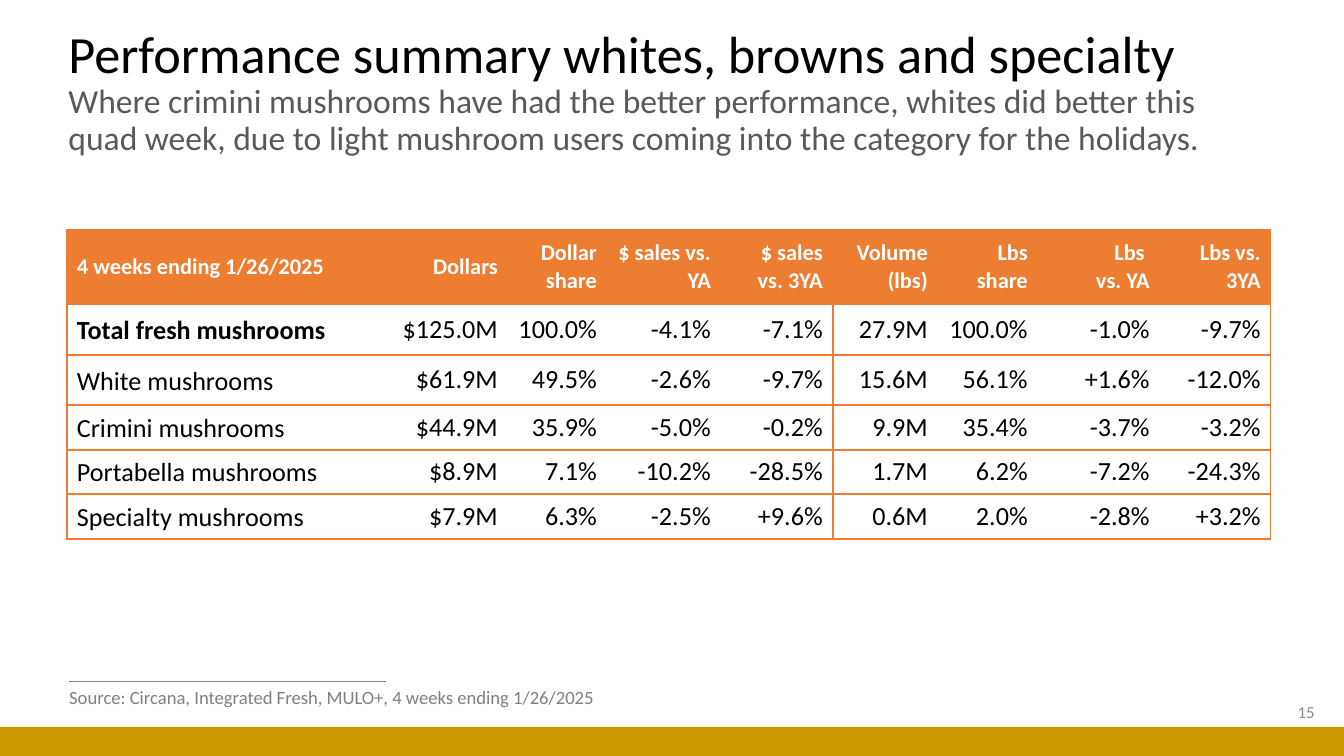
from lxml import etree
from pptx import Presentation
from pptx.dml.color import RGBColor
from pptx.enum.shapes import MSO_CONNECTOR, MSO_SHAPE
from pptx.enum.text import MSO_ANCHOR, MSO_AUTO_SIZE, PP_ALIGN
from pptx.oxml.ns import qn
from pptx.util import Pt

LEFT, RIGHT = PP_ALIGN.LEFT, PP_ALIGN.RIGHT
MIDDLE, TOP = MSO_ANCHOR.MIDDLE, MSO_ANCHOR.TOP
NO_FIT = MSO_AUTO_SIZE.NONE
STRAIGHT = MSO_CONNECTOR.STRAIGHT
RECT = MSO_SHAPE.RECTANGLE

BLACK = RGBColor(0x00, 0x00, 0x00)
WHITE = RGBColor(0xFF, 0xFF, 0xFF)
DARK = RGBColor(0x59, 0x59, 0x59)
GRAY = RGBColor(0x80, 0x80, 0x80)
PALE = RGBColor(0x8C, 0x8C, 0x8C)
ORANGE = RGBColor(0xED, 0x7D, 0x31)
GOLD = RGBColor(0xCC, 0x99, 0x00)

SCALE = 914400 / 134.4
WIDTHS = [319, 122, 99, 114, 112, 105, 100, 122, 111]
HEIGHTS = [74, 51, 50, 45, 44, 45]
LEFT_EDGES = (0, 5)
RIGHT_EDGES = (4, 8)

HEADS = [
    ["4 weeks ending 1/26/2025"], ["Dollars"], ["Dollar share"],
    ["$ sales vs. YA"], ["$ sales vs. 3YA"], ["Volume (lbs)"],
    ["Lbs", "share"], ["Lbs \nvs. YA"], ["Lbs vs. 3YA"],
]
ROWS = [
    ["Total fresh mushrooms", "$125.0M", "100.0%", "-4.1%", "-7.1%",
     "27.9M", "100.0%", "-1.0%", "-9.7%"],
    ["White mushrooms", "$61.9M", "49.5%", "-2.6%", "-9.7%",
     "15.6M", "56.1%", "+1.6%", "-12.0%"],
    ["Crimini mushrooms", "$44.9M", "35.9%", "-5.0%", "-0.2%",
     "9.9M", "35.4%", "-3.7%", "-3.2%"],
    ["Portabella mushrooms", "$8.9M", "7.1%", "-10.2%", "-28.5%",
     "1.7M", "6.2%", "-7.2%", "-24.3%"],
    ["Specialty mushrooms", "$7.9M", "6.3%", "-2.5%", "+9.6%",
     "0.6M", "2.0%", "-2.8%", "+3.2%"],
]


def px(num):
    return round(num * SCALE)


class Deck:
    font = "Calibri"

    def __init__(self, wide, high):
        self.file = Presentation()
        self.file.slide_width, self.file.slide_height = px(wide), px(high)
        self.slide = self.file.slides.add_slide(self.file.slide_layouts[5])
        self.shapes = self.slide.shapes

    def run(self, para, text, size, color, bold=False):
        for num, line in enumerate(text.split("\n")):
            if num:
                self.split(para, size)
            run = para.add_run()
            run.text = line
            run.font.name = self.font
            run.font.size = Pt(size)
            run.font.bold = bold
            run.font.color.rgb = color

    def split(self, para, size):
        para.add_line_break()
        etree.SubElement(para._p[-1], qn("a:rPr"), sz=str(size * 100))

    def title(self, x, y, wide, high, head, note):
        box = self.shapes.title
        box.left, box.top, box.width, box.height = map(px, (x, y, wide, high))
        frame = box.text_frame
        frame.auto_size = NO_FIT
        frame.word_wrap = True
        frame.vertical_anchor = MIDDLE
        para = frame.paragraphs[0]
        para.alignment = LEFT
        para.line_spacing = 0.9
        self.run(para, head, 28, BLACK)
        self.split(para, 28)
        self.run(para, note, 18, DARK)

    def text(self, x, y, wide, high, words, size, color,
             align=LEFT, anchor=TOP, wrap=True):
        box = self.shapes.add_textbox(*map(px, (x, y, wide, high)))
        frame = box.text_frame
        frame.word_wrap = wrap
        frame.vertical_anchor = anchor
        para = frame.paragraphs[0]
        para.alignment = align
        self.run(para, words, size, color)

    def line(self, x, y, end_x, end_y, color, width):
        rule = self.shapes.add_connector(
            STRAIGHT, *map(px, (x, y, end_x, end_y)))
        rule.line.color.rgb = color
        rule.line.width = Pt(width)
        etree.SubElement(rule._element.spPr, qn("a:effectLst"))

    def bar(self, x, y, wide, high, color):
        box = self.shapes.add_shape(RECT, *map(px, (x, y, wide, high)))
        box.shadow.inherit = False
        box.fill.solid()
        box.fill.fore_color.rgb = color
        box.line.fill.background()

    def edge(self, cell, side, shown):
        props = cell._tc.get_or_add_tcPr()
        line = etree.SubElement(props, qn("a:ln" + side), w=str(Pt(1)))
        if shown:
            fill = etree.SubElement(line, qn("a:solidFill"))
            etree.SubElement(fill, qn("a:srgbClr"), val=str(ORANGE))
        else:
            etree.SubElement(line, qn("a:noFill"))

    def cell(self, cell, row, col, lines):
        head = row == 0
        cell.vertical_anchor = MIDDLE
        cell.margin_left = cell.margin_right = px(10)
        cell.margin_top = cell.margin_bottom = 0
        for side, shown in (("L", col in LEFT_EDGES), ("R", col in RIGHT_EDGES),
                            ("T", True), ("B", True)):
            self.edge(cell, side, shown)
        if head:
            cell.fill.solid()
            cell.fill.fore_color.rgb = ORANGE
        else:
            cell.fill.background()
        frame = cell.text_frame
        for num, line in enumerate(lines):
            para = frame.add_paragraph() if num else frame.paragraphs[0]
            para.alignment = RIGHT if col else LEFT
            if not head and col == 0:
                para.line_spacing = 1.07
                para.space_after = Pt(8)
            self.run(para, line, 12 if head else 14, WHITE if head else BLACK,
                     head or (row == 1 and col == 0))

    def table(self, x, y, heads, rows):
        grid = self.shapes.add_table(
            len(HEIGHTS), len(WIDTHS), px(x), px(y),
            px(sum(WIDTHS)), px(sum(HEIGHTS))).table
        grid.first_row = grid.horz_banding = False
        for col, wide in zip(grid.columns, WIDTHS):
            col.width = px(wide)
        for row, high in zip(grid.rows, HEIGHTS):
            row.height = px(high)
        body = [[[word] for word in row] for row in rows]
        for row, cells in enumerate([heads] + body):
            for col, lines in enumerate(cells):
                self.cell(grid.cell(row, col), row, col, lines)


def main():
    deck = Deck(1344, 756)
    deck.line(69, 682, 386, 682, GRAY, 0.5)
    deck.bar(0, 727, 1344, 29, GOLD)
    deck.title(55, 40, 1189, 106,
               "Performance summary whites, browns and specialty",
               "Where crimini mushrooms have had the better performance, "
               "whites did better this quad week, due to light mushroom "
               "users coming into the category for the holidays.")
    deck.text(1025, 692, 303, 40, "15", 9, PALE, RIGHT, MIDDLE)
    deck.text(56, 679, 573, 36,
              "Source: Circana, Integrated Fresh, MULO+, "
              "4 weeks ending 1/26/2025", 10, GRAY, wrap=False)
    deck.table(67, 230, HEADS, ROWS)
    deck.file.save("out.pptx")


if __name__ == "__main__":
    main()
